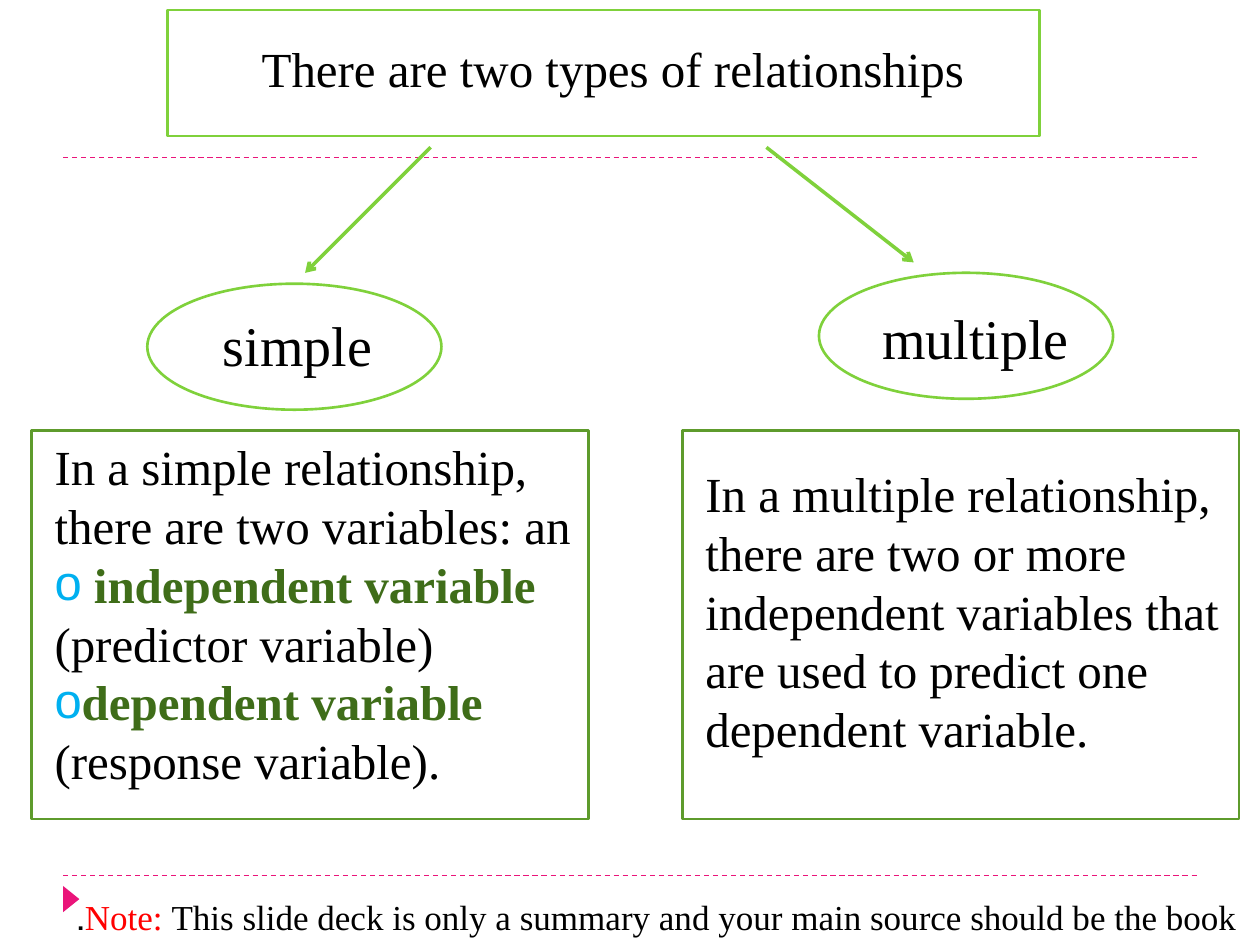
"""Build a slide that contrasts simple and multiple relationships."""
from lxml.etree import SubElement as Sub
from pptx import Presentation
from pptx.dml.color import RGBColor as RGB
from pptx.enum.dml import MSO_LINE as Dash
from pptx.enum.shapes import MSO_CONNECTOR as Conn, MSO_SHAPE as Kind
from pptx.enum.text import MSO_ANCHOR as Anchor, MSO_AUTO_SIZE as Fit, PP_ALIGN as Align
from pptx.oxml.ns import qn
from pptx.util import Cm, Pt

HUE = {"black": "000000", "white": "FFFFFF", "lime": "7FD13B", "green": "5E9B2C",
       "dark": "3F6D19", "pink": "EA157A", "red": "FF0000", "blue": "00B0F0"}


def write(paras, box, size=28, rtl=False, wrap=True, shape=None):
    shape = shape or slide.shapes.add_textbox(0, 0, 0, 0)
    shape.left, shape.top, shape.width, shape.height = map(Cm, box)
    frame = shape.text_frame
    frame.word_wrap, frame.auto_size = wrap, Fit.NONE
    frame.vertical_anchor = Anchor.TOP
    for i, (mark, runs) in enumerate(paras):
        para = frame.add_paragraph() if i else frame.paragraphs[0]
        para.alignment = Align.RIGHT if rtl else Align.LEFT
        para.line_spacing, para.space_before = Pt(size * 1.2), Pt(0)
        props = para._p.get_or_add_pPr()
        if rtl:
            props.set("rtl", "1")
        if mark:
            tint = Sub(Sub(props, qn("a:buClr")), qn("a:srgbClr"))
            tint.set("val", HUE["blue"])
            Sub(props, qn("a:buFont")).set("typeface", "Arial")
            Sub(props, qn("a:buChar")).set("char", mark)
        for text, hue in runs:
            run = para.add_run()
            run.text = text
            font = run.font
            font.name, font.size, font.bold = "Times New Roman", Pt(size), hue == "dark"
            font.color.rgb = RGB.from_string(HUE[hue])


def draw(ends, hue, width):
    link = slide.shapes.add_connector(Conn.STRAIGHT, *map(Cm, ends))
    link.line.color.rgb = RGB.from_string(HUE[hue])
    link.line.width = Pt(width)
    Sub(link._element.spPr, qn("a:effectLst"))
    return link


deck = Presentation()
deck.slide_width, deck.slide_height = Cm(25.4), Cm(19.05)
slide = deck.slides.add_slide(deck.slide_layouts[5])
title = slide.shapes.title

for y in (17.65, 3.18):
    draw((1.27, y, 24.13, y), "pink", 0.75).line.dash_style = Dash.DASH

panels = [
    (Kind.ISOSCELES_TRIANGLE, (1.17, 17.96, 0.53, 0.33), "pink", None),
    (Kind.RECTANGLE, (3.38, 0.2, 17.58, 2.54), "white", "lime"),
    (Kind.OVAL, (2.97, 5.72, 5.93, 2.54), "white", "lime"),
    (Kind.OVAL, (16.51, 5.5, 5.93, 2.54), "white", "lime"),
    (Kind.RECTANGLE, (0.64, 8.68, 11.22, 7.83), "white", "green"),
    (Kind.RECTANGLE, (13.76, 8.68, 11.22, 7.83), "white", "green"),
]
for kind, box, fill, edge in panels:
    panel = slide.shapes.add_shape(kind, *map(Cm, box))
    panel.shadow.inherit = False
    panel.fill.solid()
    panel.fill.fore_color.rgb = RGB.from_string(HUE[fill])
    if edge:
        panel.line.color.rgb = RGB.from_string(HUE[edge])
        panel.line.width = Pt(1.5)
    else:
        panel.line.fill.background()
        panel.rotation = 90

for ends in ((8.68, 2.97, 6.15, 5.5), (15.45, 2.97, 18.42, 5.29)):
    arrow = draw(ends, "lime", 2)
    Sub(arrow.line._get_or_add_ln(), qn("a:tailEnd")).set("type", "arrow")

slide.shapes._spTree.append(title._element)
write([("", [("There are two types of relationships", "black")])],
      (4.45, 0.64, 15.24, 1.45), rtl=True, shape=title)
write([("", [("simple", "black")])], (4.2, 6.13, 3.56, 1.62),
      size=32, rtl=True, wrap=False)
write([("", [("multiple", "black")])], (17.35, 6, 4.45, 1.62), size=32, rtl=True)
write([
    ("", [("In a simple relationship, there are two variables: an", "black")]),
    ("o", [(" ", "black"), ("independent variable ", "dark"),
           ("(predictor variable)", "black")]),
    ("o", [("dependent variable ", "dark"), ("(response variable).", "black")]),
], (0.85, 8.68, 11.22, 7.45))
write([("", [("In a multiple relationship, there are two or more independent variables "
              "that are used to predict one dependent variable.", "black")])],
      (13.97, 9.22, 11, 6.25))
write([("", [("Note:", "red"),
             (" This slide deck is only a summary and your main source should be "
              "the book.", "black")])],
      (0.42, 17.93, 24.77, 1.12), size=20, rtl=True)

deck.save("out.pptx")
